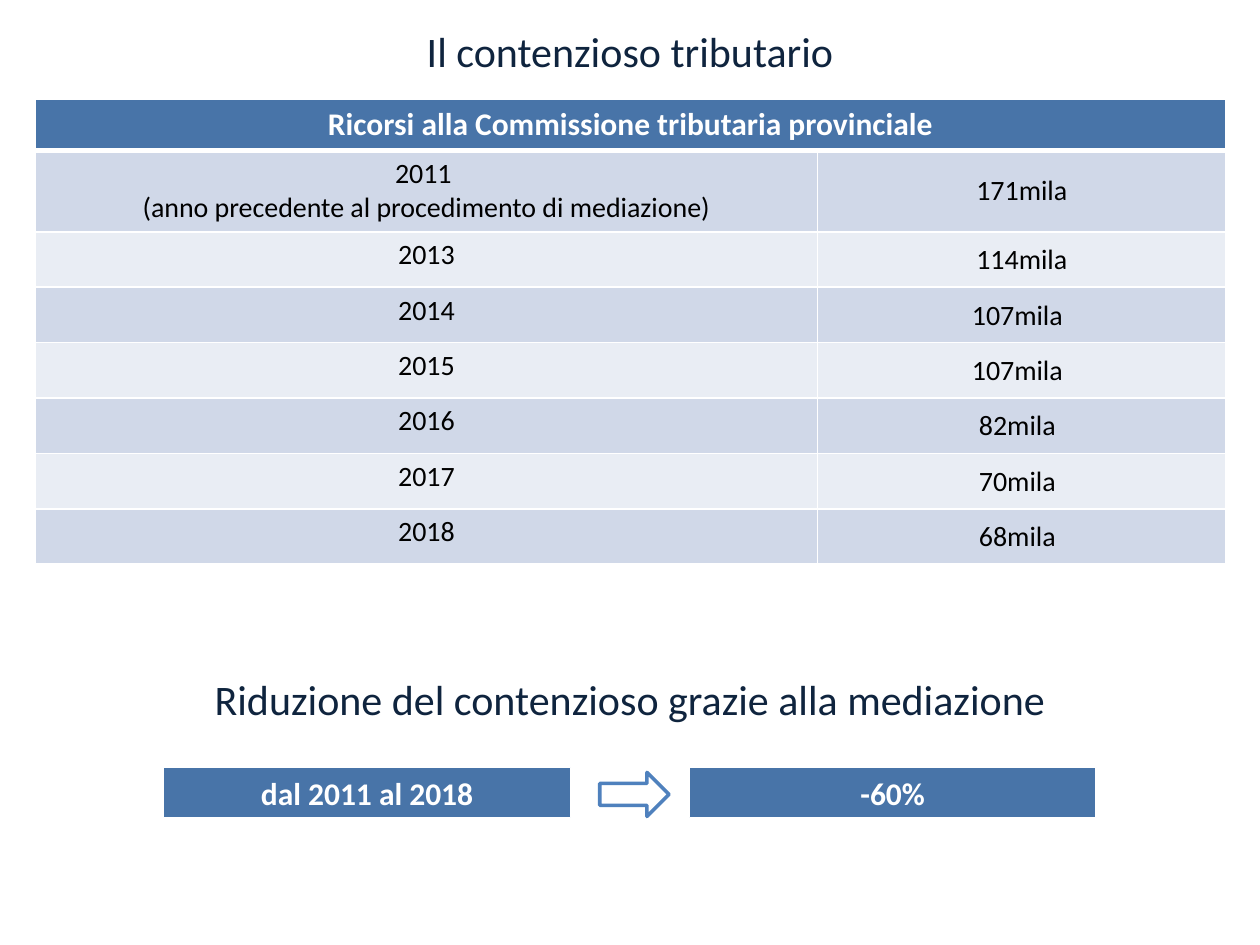
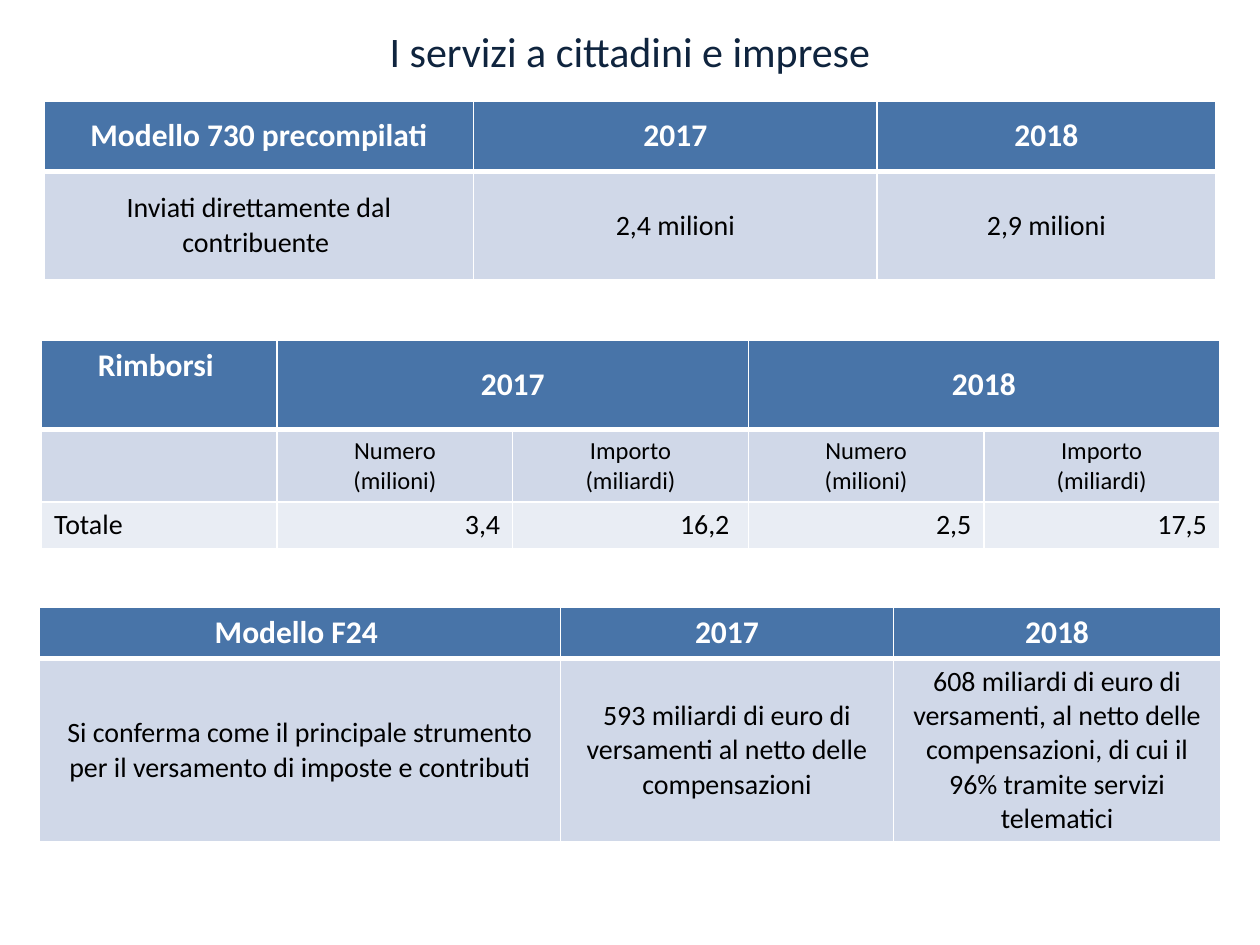
from lxml import etree
from pptx import Presentation
from pptx.dml.color import RGBColor
from pptx.enum.shapes import MSO_SHAPE
from pptx.enum.text import MSO_ANCHOR, PP_ALIGN
from pptx.oxml.ns import qn
from pptx.util import Inches, Pt

WHITE = RGBColor(0xFF, 0xFF, 0xFF)
BLACK = RGBColor(0x00, 0x00, 0x00)
NAVY = RGBColor(0x0F, 0x24, 0x3E)
BLUE = RGBColor(0x48, 0x74, 0xA8)
ARROW_BLUE = RGBColor(0x4F, 0x81, 0xBD)
BANDS = [RGBColor(0xD0, 0xD8, 0xE8), RGBColor(0xE9, 0xED, 0xF4)]
FONT = "Calibri"
TOP, MIDDLE = MSO_ANCHOR.TOP, MSO_ANCHOR.MIDDLE
LEFT, CENTER, RIGHT = PP_ALIGN.LEFT, PP_ALIGN.CENTER, PP_ALIGN.RIGHT
RECTANGLE, RIGHT_ARROW = MSO_SHAPE.RECTANGLE, MSO_SHAPE.RIGHT_ARROW
TITLE_ONLY = 5


def write(tf, text, size=16, color=BLACK, bold=False, align=CENTER):
    """Fill a text frame, one paragraph for each line of text."""
    tf.word_wrap = True
    for i, line in enumerate(text.split("\n")):
        p = tf.paragraphs[0] if i == 0 else tf.add_paragraph()
        p.alignment = align
        r = p.add_run()
        r.text = line
        r.font.name, r.font.size = FONT, Pt(size)
        r.font.color.rgb, r.font.bold = color, bold


def add_table(slide, left, top, widths, heights, rows, sizes):
    """Add a table with a blue header, banded rows and white rules.

    sizes holds the text size of each row; None marks a cell merged into
    the one on its left.
    """
    frame = slide.shapes.add_table(
        len(heights), len(widths), Inches(left), Inches(top),
        Inches(sum(widths)), Inches(sum(heights)))
    table = frame.table
    for column, width in zip(table.columns, widths):
        column.width = Inches(width)
    for i, (height, values) in enumerate(zip(heights, rows)):
        table.rows[i].height = Inches(height)
        header = i == 0
        for j, value in enumerate(values):
            cell = table.cell(i, j)
            tcPr = cell._tc.get_or_add_tcPr()
            for side in "LRTB":
                thick = (header and side == "B") or (i == 1 and side == "T")
                ln = etree.SubElement(tcPr, qn(f"a:ln{side}"),
                                      w=str(Pt(3 if thick else 1)))
                fill = etree.SubElement(ln, qn("a:solidFill"))
                etree.SubElement(fill, qn("a:srgbClr"), val=str(WHITE))
            cell.fill.solid()
            cell.fill.fore_color.rgb = BLUE if header else BANDS[(i - 1) % 2]
            cell.vertical_anchor = MIDDLE
            if value is None:
                table.cell(i, j - 1).merge(cell)
            elif value:
                write(cell.text_frame, value, size=sizes[i], bold=header,
                      color=WHITE if header else BLACK)
    return table


prs = Presentation()
prs.slide_width, prs.slide_height = Inches(10), Inches(7.5)

slides = []
for title in ["Il contenzioso tributario", "I servizi a cittadini e imprese"]:
    s = prs.slides.add_slide(prs.slide_layouts[TITLE_ONLY])
    sp = s.shapes.title
    sp.left, sp.top = Inches(0.63), Inches(0.15)
    sp.width, sp.height = Inches(8.74), Inches(0.5)
    write(sp.text_frame, title, size=24, color=NAVY)
    slides.append(s)
disputes, services = slides

# Slide 1: tax disputes
appeals = [
    ["Ricorsi alla Commissione tributaria provinciale", None],
    ["2011 \n(anno precedente al procedimento di mediazione)", "171mila"],
    ["2013", "114mila"],
    ["2014", "107mila"],
    ["2015", "107mila"],
    ["2016", "82mila"],
    ["2017", "70mila"],
    ["2018", "68mila"],
]
table = add_table(disputes, 0.28, 0.79, [6.21, 3.24],
                  [0.4, 0.64] + [0.44] * 6, appeals, [18] + [16] * 7)
for i in range(2, len(appeals)):
    table.cell(i, 0).vertical_anchor = TOP
    if i > 2:
        count = table.cell(i, 1)
        count.margin_left = count.margin_top = Inches(0.01)
        count.margin_right, count.margin_bottom = Inches(0.08), 0

sp = disputes.shapes.add_textbox(Inches(0.63), Inches(5.3),
                                 Inches(8.74), Inches(0.5))
write(sp.text_frame, "Riduzione del contenzioso grazie alla mediazione",
      size=24, color=NAVY)

for kind, left, top, width, height, fill, line, weight, text in [
    (RECTANGLE, 1.3, 6.09, 3.23, 0.4, BLUE, WHITE, 0.75, "dal 2011 al 2018"),
    (RIGHT_ARROW, 4.76, 6.13, 0.55, 0.35, WHITE, ARROW_BLUE, 2, ""),
    (RECTANGLE, 5.47, 6.09, 3.23, 0.4, BLUE, WHITE, 0.75, "-60%"),
]:
    sp = disputes.shapes.add_shape(kind, Inches(left), Inches(top),
                                   Inches(width), Inches(height))
    sp.shadow.inherit = False
    sp.fill.solid()
    sp.fill.fore_color.rgb = fill
    sp.line.color.rgb = line
    sp.line.width = Pt(weight)
    if text:
        write(sp.text_frame, text, size=18, color=WHITE, bold=True)

# Slide 2: services
add_table(services, 0.35, 0.8, [3.41, 3.2, 2.69], [0.56, 0.86], [
    ["Modello 730 precompilati", "2017", "2018"],
    ["Inviati direttamente dal contribuente ", "2,4 milioni", "2,9 milioni"],
], [18, 16])

refunds = add_table(services, 0.33, 2.7, [1.87] * 5, [0.71, 0.57, 0.36], [
    ["Rimborsi ", "2017", None, "2018", None],
    [""] + ["Numero\n(milioni)", "Importo\n(miliardi)"] * 2,
    ["Totale", "3,4", "16,2 ", "2,5", "17,5"],
], [18, 14, 16])
refunds.cell(0, 0).vertical_anchor = TOP
for j in range(5):
    p = refunds.cell(2, j).text_frame.paragraphs[0]
    p.alignment = RIGHT if j else LEFT

add_table(services, 0.31, 4.82, [4.14, 2.64, 2.6], [0.4, 1.45], [
    ["Modello F24 ", "2017", "2018"],
    ["Si conferma come il principale strumento per il versamento di imposte "
     "e contributi",
     "593 miliardi di euro di versamenti al netto delle compensazioni",
     "608 miliardi di euro di versamenti, al netto delle compensazioni, "
     "di cui il 96% tramite servizi telematici"],
], [18, 16])

prs.save("out.pptx")
